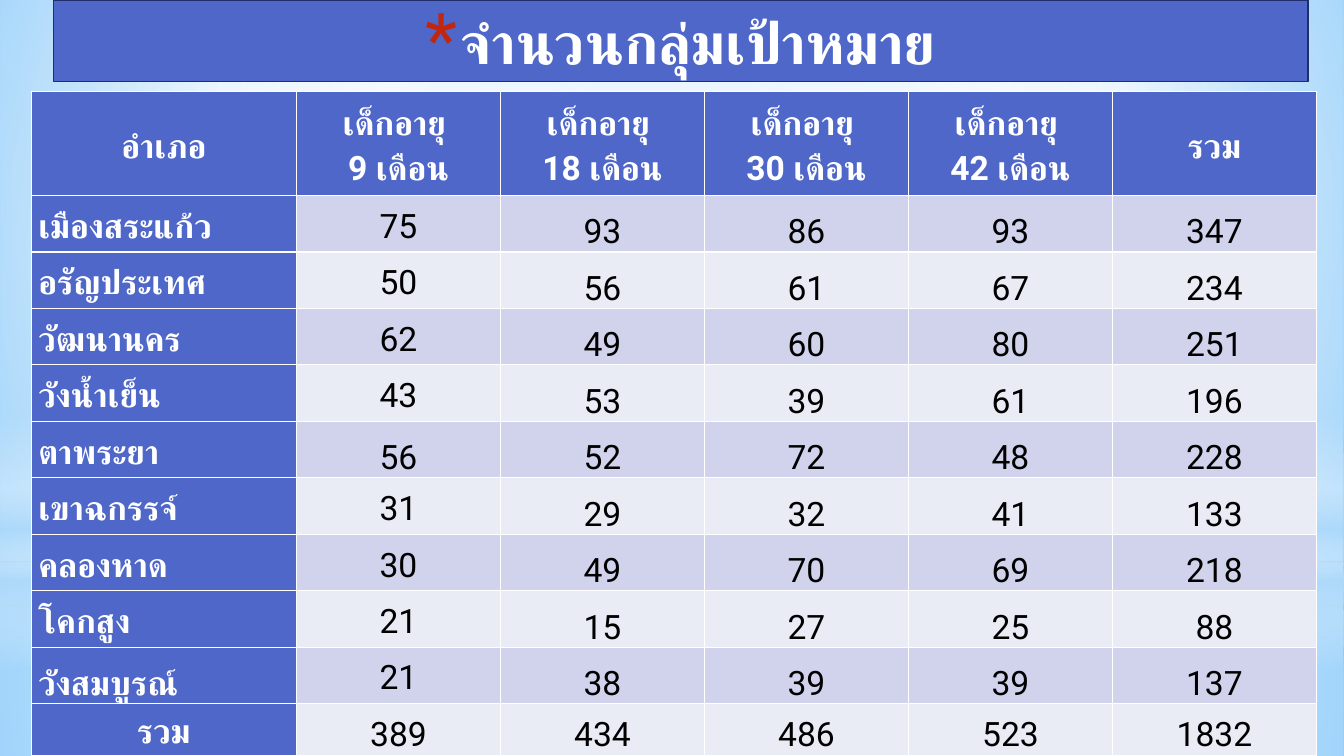
from dataclasses import dataclass
from typing import Any

from lxml.etree import SubElement
from pptx import Presentation
from pptx.dml.color import RGBColor
from pptx.enum.shapes import MSO_SHAPE as Preset
from pptx.enum.text import MSO_ANCHOR as Anchor, MSO_AUTO_SIZE as AutoSize, PP_ALIGN as Align
from pptx.oxml import parse_xml
from pptx.oxml.ns import nsdecls, qn
from pptx.util import Emu, Inches, Pt

WIDTH, HEIGHT = Inches(13.33), Inches(7.5)
FONT = "Roboto"
WHITE = RGBColor(0xFF, 0xFF, 0xFF)
BLACK = RGBColor(0x00, 0x00, 0x00)
BLUE = RGBColor(0x4E, 0x67, 0xC8)
NAVY = RGBColor(0x1F, 0x2E, 0x69)
RED = RGBColor(0xC3, 0x26, 0x0C)
SKY = RGBColor(0x9E, 0xD5, 0xFF)
DEEP_SKY = RGBColor(0x5B, 0xB9, 0xFF)
MIST = RGBColor(0xB4, 0xDC, 0xFA)
BANDS = (RGBColor(0xE9, 0xEB, 0xF5), RGBColor(0xD0, 0xD3, 0xEB))


@dataclass(frozen=True)
class Stop:
    place: int
    color: RGBColor
    opacity: int = 100


@dataclass(frozen=True)
class Gradient:
    stops: tuple[Stop, ...]
    focus: tuple[int, int, int, int] | None = (50, 50, 50, 50)


@dataclass(frozen=True)
class Layer:
    top: float
    height: float
    gradient: Gradient
    preset: Preset = Preset.RECTANGLE


@dataclass(frozen=True)
class District:
    name: str
    counts: tuple[int, ...]
    name_anchor: Anchor = Anchor.MIDDLE
    first_anchor: Anchor = Anchor.MIDDLE
    name_align: Align = Align.LEFT


BACKDROP = Gradient((Stop(0, SKY), Stop(60, WHITE), Stop(100, DEEP_SKY)), (20, 10, 20, 60))
LAYERS = (
    Layer(74.4, 25.6, Gradient((Stop(0, WHITE, 91), Stop(37, WHITE, 76), Stop(100, MIST, 79)))),
    Layer(0, 74.4, Gradient((Stop(0, WHITE, 89), Stop(48, WHITE, 62), Stop(100, MIST, 79)))),
    Layer(54.93, 33.33, Gradient((Stop(0, WHITE, 0), Stop(29, WHITE, 30), Stop(45, MIST, 40),
                                  Stop(55, WHITE, 26), Stop(65, MIST, 60), Stop(100, WHITE, 0)), None)),
    Layer(23.33, 74.4, Gradient((Stop(0, WHITE), Stop(56, WHITE, 0))), Preset.OVAL),
)
HEADINGS = ("อำเภอ", *(f"เด็กอายุ \n{months} เดือน" for months in (9, 18, 30, 42)), "รวม")
DISTRICTS = (
    District("เมืองสระแก้ว", (75, 93, 86, 93, 347)),
    District("อรัญประเทศ", (50, 56, 61, 67, 234)),
    District("วัฒนานคร", (62, 49, 60, 80, 251)),
    District("วังน้ำเย็น", (43, 53, 39, 61, 196)),
    District("ตาพระยา", (56, 52, 72, 48, 228), first_anchor=Anchor.BOTTOM),
    District("เขาฉกรรจ์", (31, 29, 32, 41, 133)),
    District("คลองหาด", (30, 49, 70, 69, 218)),
    District("โคกสูง", (21, 15, 27, 25, 88)),
    District("วังสมบูรณ์", (21, 38, 39, 39, 137), name_anchor=Anchor.BOTTOM),
    District("รวม", (389, 434, 486, 523, 1832), first_anchor=Anchor.BOTTOM, name_align=Align.CENTER),
)
COLUMN_SHARES = (19.73, *[15.18] * 5)
ROW_SHARES = (13.73, *[7.47] * 9, 6.8)


def across(percent: float) -> Emu:
    return Emu(round(WIDTH * percent / 100))


def down(percent: float) -> Emu:
    return Emu(round(HEIGHT * percent / 100))


def paint_gradient(fill: Any, owner: Any, gradient: Gradient) -> None:
    fill.gradient()
    stops = "".join(
        f'<a:gs pos="{stop.place * 1000}"><a:srgbClr val="{stop.color}">'
        f'<a:alpha val="{stop.opacity * 1000}"/></a:srgbClr></a:gs>'
        for stop in gradient.stops
    )
    direction = '<a:lin ang="5400000" scaled="0"/>'
    if gradient.focus:
        sides = " ".join(f'{side}="{share * 1000}"' for side, share in zip("ltrb", gradient.focus))
        direction = f'<a:path path="circle"><a:fillToRect {sides}/></a:path>'
    painted = parse_xml(f'<a:gradFill {nsdecls("a")} rotWithShape="1">'
                        f"<a:gsLst>{stops}</a:gsLst>{direction}</a:gradFill>")
    default = next(owner.iter(qn("a:gradFill")))
    default.getparent().replace(default, painted)


def format_para(para: Any, size: float, color: RGBColor, bold: bool, align: Align) -> None:
    para.alignment = align
    font = para.font
    font.size, font.bold, font.name = Pt(size), bold, FONT
    font.color.rgb = color
    SubElement(para._p.pPr.find(qn("a:defRPr")), qn("a:cs"), typeface=FONT)


def draw_layer(page: Any, layer: Layer) -> None:
    box = page.shapes.add_shape(layer.preset, 0, down(layer.top), WIDTH, down(layer.height))
    box.shadow.inherit = False
    box.line.fill.background()
    paint_gradient(box.fill, box._element, layer.gradient)


def draw_title(page: Any) -> None:
    title = page.shapes.title
    title.left, title.top = across(3.98), 0
    title.width, title.height = across(93.32), down(10.8)
    title.fill.solid()
    title.fill.fore_color.rgb = BLUE
    title.line.color.rgb = NAVY
    title.line.width = Pt(1.25)
    frame = title.text_frame
    frame.text = "จำนวนกลุ่มเป้าหมาย"
    frame.auto_size = AutoSize.NONE
    frame.vertical_anchor = Anchor.MIDDLE
    para = frame.paragraphs[0]
    format_para(para, 41.4, WHITE, True, Align.CENTER)
    properties = para._p.pPr
    properties.set("marL", str(Inches(0.35)))
    properties.set("indent", str(-Inches(0.35)))
    bullet = (f'<a:buClr {nsdecls("a")}><a:srgbClr val="{RED}"/></a:buClr>',
              f'<a:buSzPct {nsdecls("a")} val="128000"/>',
              f'<a:buFont {nsdecls("a")} typeface="{FONT}"/>',
              f'<a:buChar {nsdecls("a")} char="*"/>')
    for position, part in enumerate(bullet):
        properties.insert(position, parse_xml(part))
    page.shapes._spTree.append(title._element)


def fill_cell(cell: Any, text: str, fill: RGBColor, anchor: Anchor = Anchor.MIDDLE,
              align: Align = Align.CENTER, heading: bool = True) -> None:
    cell.fill.solid()
    cell.fill.fore_color.rgb = fill
    cell.vertical_anchor = anchor
    cell.margin_left = cell.margin_right = Inches(0.07)
    cell.margin_top = cell.margin_bottom = 0
    cell.text = text
    for para in cell.text_frame.paragraphs:
        para.line_spacing = 1.15
        format_para(para, 24, WHITE if heading else BLACK, heading, align)


def draw_table(page: Any) -> None:
    table = page.shapes.add_table(len(ROW_SHARES), len(COLUMN_SHARES), across(2.33), down(12.13),
                                  across(sum(COLUMN_SHARES)), down(sum(ROW_SHARES))).table
    table.first_col = True
    for column, share in zip(table.columns, COLUMN_SHARES):
        column.width = across(share)
    for row, share in zip(table.rows, ROW_SHARES):
        row.height = down(share)
    for index, heading in enumerate(HEADINGS):
        fill_cell(table.cell(0, index), heading, BLUE)
    for row, district in enumerate(DISTRICTS, 1):
        fill_cell(table.cell(row, 0), district.name, BLUE, district.name_anchor, district.name_align)
        for column, count in enumerate(district.counts, 1):
            anchor = district.first_anchor if column == 1 else Anchor.BOTTOM
            fill_cell(table.cell(row, column), str(count), BANDS[row % 2], anchor, heading=False)


def main() -> None:
    deck = Presentation()
    deck.slide_width, deck.slide_height = WIDTH, HEIGHT
    page = deck.slides.add_slide(deck.slide_layouts.get_by_name("Title Only"))
    paint_gradient(page.background.fill, page._element, BACKDROP)
    for layer in LAYERS:
        draw_layer(page, layer)
    draw_title(page)
    draw_table(page)
    deck.save("out.pptx")


if __name__ == "__main__":
    main()
